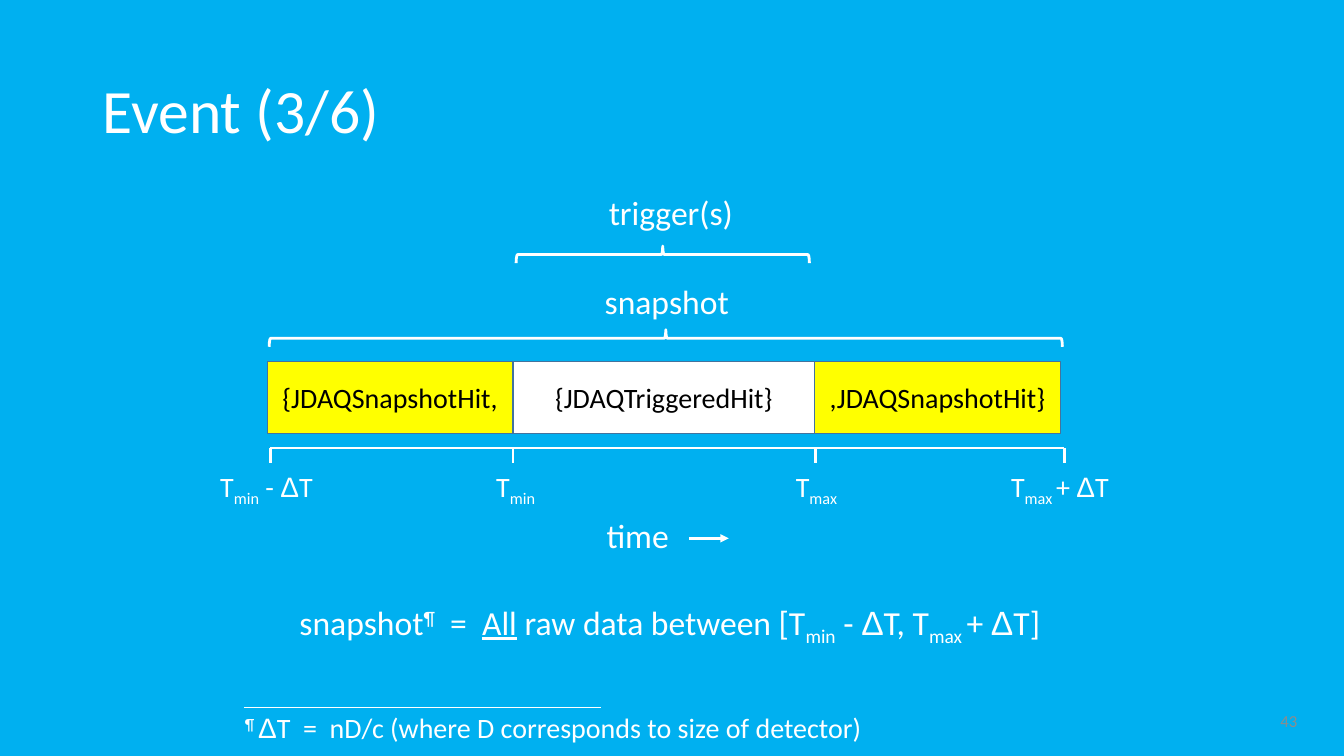
import pptx
import pptx.dml.color
import pptx.enum.dml
import pptx.enum.shapes
import pptx.enum.text
import pptx.oxml.ns
import pptx.util
from lxml import etree

Pt = pptx.util.Pt
RGBColor = pptx.dml.color.RGBColor
Align = pptx.enum.text.PP_ALIGN
Anchor = pptx.enum.text.MSO_ANCHOR
Shape = pptx.enum.shapes.MSO_SHAPE

SKY = RGBColor(0x00, 0xB0, 0xF0)
WHITE = RGBColor(0xFF, 0xFF, 0xFF)
BLACK = RGBColor(0x00, 0x00, 0x00)
YELLOW = RGBColor(0xFF, 0xFF, 0x00)
STEEL = RGBColor(0x43, 0x73, 0x9E)
GREY = RGBColor(0x8C, 0x8C, 0x8C)

BASELINES = {"sub": "-25000", "sup": "30000"}
DELTA = ("Δ", "greek")
LOWER = [("T", ""), ("min", "sub"), (" - ", ""), DELTA]
UPPER = [("T", ""), ("max ", "sub"), ("+ ", ""), DELTA]


def set_values(target, values):
    """Set each attribute of the target from a dict."""
    for name, value in values.items():
        setattr(target, name, value)


def write_text(frame, spans, size, color, align):
    """Write one paragraph of (text, style) spans."""
    para = frame.paragraphs[0]
    para.alignment = align
    for text, style in spans:
        span = para.add_run()
        span.text = text
        set_values(span.font, {
            "size": Pt(size),
            "name": "Arial" if style == "greek" else "Calibri",
            "underline": style == "under",
        })
        span.font.color.rgb = color
        if style in BASELINES:
            span.font._element.set("baseline", BASELINES[style])
    return para


def add_label(page, place, spans, size, align=Align.CENTER):
    """Add a white, unwrapped text box that fits its text."""
    box = page.shapes.add_textbox(*map(Pt, place))
    set_values(box.text_frame, {
        "word_wrap": False,
        "auto_size": pptx.enum.text.MSO_AUTO_SIZE.SHAPE_TO_FIT_TEXT,
    })
    write_text(box.text_frame, spans, size, WHITE, align)


def add_block(page, place, text, size, color, align):
    """Add a wrapped text box with its text in the middle."""
    box = page.shapes.add_textbox(*map(Pt, place))
    set_values(box.text_frame, {
        "word_wrap": True, "vertical_anchor": Anchor.MIDDLE})
    return write_text(box.text_frame, [(text, "")], size, color, align)


def add_hits(page, left, width, text, fill):
    """Add one bordered box of the event bar."""
    box = page.shapes.add_shape(
        Shape.RECTANGLE, Pt(left), Pt(258.5), Pt(width), Pt(51))
    box.shadow.inherit = False
    box.fill.solid()
    box.fill.fore_color.rgb = fill
    box.line.color.rgb = STEEL
    box.line.width = Pt(0.75)
    set_values(box.text_frame, {
        "word_wrap": True, "vertical_anchor": Anchor.MIDDLE})
    write_text(box.text_frame, [(text, "")], 20, BLACK, Align.CENTER)


def add_brace(page, center, middle, length):
    """Add a brace that opens downwards over a span of the bar."""
    depth = 12.2
    brace = page.shapes.add_shape(
        Shape.RIGHT_BRACE, Pt(center - depth / 2), Pt(middle - length / 2),
        Pt(depth), Pt(length))
    brace.rotation = 270
    brace.shadow.inherit = False
    brace.fill.background()
    brace.line.color.rgb = WHITE
    brace.line.width = Pt(2)


def add_line(page, start, end, width=2, arrow=False):
    """Add a white straight line, with an arrowhead if asked."""
    line = page.shapes.add_connector(
        pptx.enum.shapes.MSO_CONNECTOR.STRAIGHT, *map(Pt, start + end))
    line.line.color.rgb = WHITE
    line.line.width = Pt(width)
    if arrow:
        etree.SubElement(line.line._get_or_add_ln(),
                         pptx.oxml.ns.qn("a:tailEnd"), type="triangle")
    etree.SubElement(line._element.spPr, pptx.oxml.ns.qn("a:effectLst"))


def add_time_axis(page):
    """Add the time axis with its ticks and their labels."""
    ticks = [
        (193, 190.4, 81.4, LOWER + [("T", "")]),
        (366.5, 368.3, 44, LOWER[:2]),
        (582.5, 583.2, 46, [("T", ""), ("max", "sub")]),
        (760.3, 757.1, 85.7, UPPER + [("T", "")]),
    ]
    add_line(page, (ticks[0][0], 320), (ticks[-1][0], 320))
    for tick, center, width, spans in ticks:
        add_line(page, (tick, 320), (tick, 331))
        add_label(page, (center - width / 2, 332, width, 31.7), spans, 20)
    add_label(page, (426.2, 364.3, 59.8, 36), [("time", "")], 24, Align.LEFT)
    add_line(page, (492.5, 384.5), (520.6, 384.5), arrow=True)


def main():
    """Build the event slide and save it."""
    deck = pptx.Presentation()
    set_values(deck, {"slide_width": Pt(960), "slide_height": Pt(540)})
    page = deck.slides.add_slide(deck.slide_layouts[6])
    page.background.fill.solid()
    page.background.fill.fore_color.rgb = SKY

    title = add_block(page, (66.2, 28.8, 828, 104.4), "Event (3/6)",
                      44, WHITE, Align.LEFT)
    title.line_spacing = 0.9

    add_label(page, (427, 133.2, 104.4, 36), [("trigger(s)", "")], 24)
    add_brace(page, 473.4, 181.8, 209.5)
    add_label(page, (424, 197.3, 104.4, 36), [("snapshot", "")], 24)
    add_brace(page, 475.6, 241.6, 566.6)

    add_hits(page, 366.5, 215.3, "{JDAQTriggeredHit}", WHITE)
    add_hits(page, 190.8, 175.7, "{JDAQSnapshotHit,", YELLOW)
    add_hits(page, 581.8, 175.7, ",JDAQSnapshotHit}", YELLOW)
    add_time_axis(page)

    formula = [("snapshot", ""), ("¶", "sup"), ("  =  ", ""),
               ("All", "under"), (" raw data between [", ""),
               *LOWER, ("T, ", ""), *UPPER, ("T]", "")]
    add_label(page, (203, 426.2, 550.8, 36), formula, 24)

    add_line(page, (174.2, 505.4), (429.1, 505.4), width=0.5)
    footnote = [("¶ ", "sup"), DELTA,
                ("T  =  nD/c (where D corresponds to size of detector)", "")]
    add_label(page, (167.8, 504, 459.4, 31.7), footnote, 20, Align.LEFT)
    add_block(page, (717.8, 500.4, 216, 28.8), "43", 12, GREY, Align.RIGHT)
    deck.save("out.pptx")


if __name__ == "__main__":
    main()
